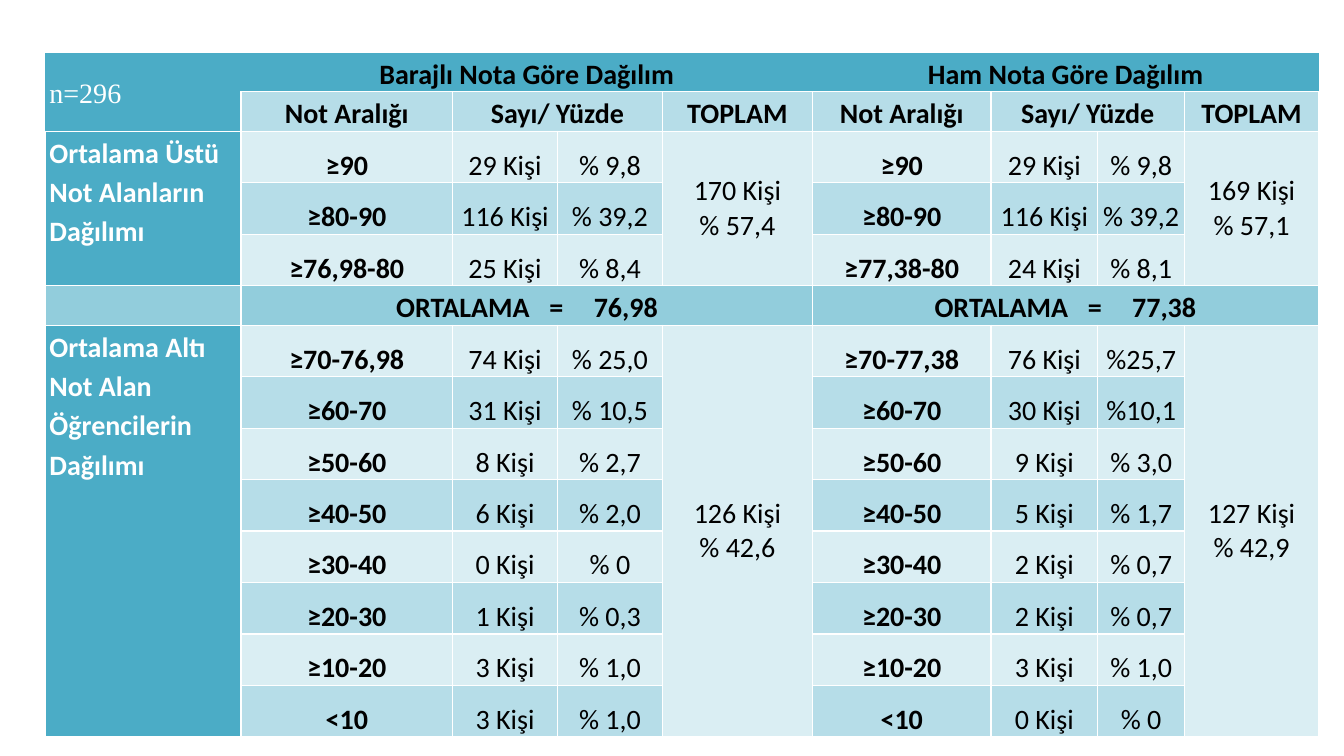
from dataclasses import dataclass
from lxml import etree
from pptx import Presentation, util as u
from pptx.dml.color import RGBColor
from pptx.enum import text
from pptx.oxml import ns

SAMPLE = "n=296"
HEADINGS = ("Not Aralığı", "Sayı/ Yüzde", "TOPLAM")
GROUPS = (
    ("Ortalama Üstü Not Alanların Dağılımı", 2, 3),
    ("Ortalama Altı Not Alan Öğrencilerin Dağılımı", 6, 8),
)
DISTRIBUTIONS = (
    {
        "title": "Barajlı Nota Göre Dağılım",
        "mean": "76,98",
        "mean_inset": 1.54,
        "totals": (("170 Kişi", "% 57,4"), ("126 Kişi", "% 42,6")),
        "rows": (
            (("≥90", "29 Kişi", "% 9,8"), ("≥80-90", "116 Kişi", "% 39,2"),
             ("≥76,98-80", "25 Kişi", "% 8,4")),
            (("≥70-76,98", "74 Kişi", "% 25,0"), ("≥60-70", "31 Kişi", "% 10,5"),
             ("≥50-60", "8 Kişi", "% 2,7"), ("≥40-50", "6 Kişi", "% 2,0"),
             ("≥30-40", "0 Kişi", "% 0"), ("≥20-30", "1 Kişi", "% 0,3"),
             ("≥10-20", "3 Kişi", "% 1,0"), ("<10", "3 Kişi", "% 1,0")),
        ),
    },
    {
        "title": "Ham Nota Göre Dağılım",
        "mean": "77,38",
        "mean_inset": 1.21,
        "totals": (("169 Kişi", "% 57,1"), ("127 Kişi", "% 42,9")),
        "rows": (
            (("≥90", "29 Kişi", "% 9,8"), ("≥80-90", "116 Kişi", "% 39,2"),
             ("≥77,38-80", "24 Kişi", "% 8,1")),
            (("≥70-77,38", "76 Kişi", "%25,7"), ("≥60-70", "30 Kişi", "%10,1"),
             ("≥50-60", "9 Kişi", "% 3,0"), ("≥40-50", "5 Kişi", "% 1,7"),
             ("≥30-40", "2 Kişi", "% 0,7"), ("≥20-30", "2 Kişi", "% 0,7"),
             ("≥10-20", "3 Kişi", "% 1,0"), ("<10", "0 Kişi", "% 0")),
        ),
    },
)
COLUMNS = (1.94, 2.1, 1.04, 1.04, 1.49, 1.77, 1.06, 0.86, 1.33)
HEADER_ROW, DATA_ROW = 0.39, 0.48
MEAN_ROW = 5
ROWS = [HEADER_ROW if row in (0, 1, MEAN_ROW) else DATA_ROW for row in range(14)]
LEFT, TOP = 0.45, 0.52
MEAN_TABS = (1.52, 1.96)
NO_GRID_STYLE = "{2D5ABB26-0587-4C30-8999-92F81FD0307C}"


@dataclass(frozen=True)
class Theme:
    strong: str = "4BACC6"
    medium: str = "92CDDC"
    soft: str = "B6DDE8"
    pale: str = "DAEEF3"
    ink: str = "000000"
    white: str = "FFFFFF"
    font: str = "Calibri"
    sample_font: str = "Times New Roman"
    size: int = 20
    border: int = 1
    inset: float = 0.04


THEME = Theme()


def add_border(cell, side):
    properties = cell._tc.get_or_add_tcPr()
    line = etree.SubElement(properties, ns.qn(f"a:{side}"), w=str(u.Pt(THEME.border)))
    fill = etree.SubElement(line, ns.qn("a:solidFill"))
    etree.SubElement(fill, ns.qn("a:srgbClr"), val=THEME.white)


def prepare_cell(cell, row, column):
    sides = ("lnT", "lnB") if row == 0 else ("lnL", "lnR", "lnT", "lnB")
    for side in sides:
        add_border(cell, side)
    cell.margin_left = cell.margin_right = u.Inches(THEME.inset)
    cell.margin_top = cell.margin_bottom = 0
    cell.vertical_anchor = text.MSO_ANCHOR.MIDDLE


def paint(cell, color):
    cell.fill.solid()
    cell.fill.fore_color.rgb = RGBColor.from_string(color)


def write(cell, lines, color=THEME.ink, bold=False, font=THEME.font,
          align=text.PP_ALIGN.CENTER, spacing=None, after=None):
    frame = cell.text_frame
    for index, line in enumerate(lines):
        paragraph = frame.add_paragraph() if index else frame.paragraphs[0]
        paragraph.alignment = align
        if spacing:
            paragraph.line_spacing = spacing
        if after:
            paragraph.space_after = u.Pt(after)
        run = paragraph.add_run()
        run.text = line
        run.font.name = font
        run.font.size = u.Pt(THEME.size)
        run.font.bold = bold
        run.font.color.rgb = RGBColor.from_string(color)


def write_label(cell, label, **style):
    write(cell, [label], spacing=1.15, after=10, **style)


def write_mean(cell, distribution):
    cell.margin_left = u.Inches(distribution["mean_inset"])
    write_label(cell, f"ORTALAMA\t=\t{distribution['mean']}", bold=True,
                align=text.PP_ALIGN.LEFT)
    properties = cell.text_frame.paragraphs[0]._p.get_or_add_pPr()
    tabs = etree.SubElement(properties, ns.qn("a:tabLst"))
    for position in MEAN_TABS:
        etree.SubElement(tabs, ns.qn("a:tab"), pos=str(u.Inches(position)), algn="l")


def merge(table, row, column, height, width):
    cell = table.cell(row, column)
    cell.merge(table.cell(row + height - 1, column + width - 1))
    return cell


def row_color(row):
    if row in (0, MEAN_ROW):
        return THEME.strong if row == 0 else THEME.medium
    if row == 1:
        return THEME.soft
    start = max(first for _, first, _ in GROUPS if first <= row)
    return THEME.soft if (row - start) % 2 else THEME.pale


def fill_distribution(table, distribution, column):
    write_label(merge(table, 0, column, 1, 4), distribution["title"], bold=True)
    merge(table, 1, column + 1, 1, 2)
    for offset, heading in zip((0, 1, 3), HEADINGS):
        write_label(table.cell(1, column + offset), heading, bold=True)
    write_mean(merge(table, MEAN_ROW, column, 1, 4), distribution)
    for (_, start, height), rows, total in zip(
            GROUPS, distribution["rows"], distribution["totals"]):
        for row, values in enumerate(rows, start):
            for offset, value in enumerate(values):
                write(table.cell(row, column + offset), [value],
                      bold=offset == 0, spacing=1.5)
        total_cell = merge(table, start, column + 3, height, 1)
        paint(total_cell, THEME.pale)
        write(total_cell, total)


def main():
    presentation = Presentation()
    presentation.slide_width = u.Inches(13.33)
    presentation.slide_height = u.Inches(7.5)
    slide = presentation.slides.add_slide(presentation.slide_layouts[6])
    shape = slide.shapes.add_table(
        len(ROWS), len(COLUMNS), u.Inches(LEFT), u.Inches(TOP),
        u.Inches(sum(COLUMNS)), u.Inches(sum(ROWS)))
    table = shape.table
    table.first_row = table.horz_banding = False
    table._tbl.tblPr.find(ns.qn("a:tableStyleId")).text = NO_GRID_STYLE
    for column, width in enumerate(COLUMNS):
        table.columns[column].width = u.Inches(width)
    for row, height in enumerate(ROWS):
        table.rows[row].height = u.Inches(height)
        for column in range(len(COLUMNS)):
            cell = table.cell(row, column)
            prepare_cell(cell, row, column)
            label = column == 0 and row != MEAN_ROW
            paint(cell, THEME.strong if label else row_color(row))

    write_label(merge(table, 0, 0, 2, 1), SAMPLE, color=THEME.white,
                font=THEME.sample_font, align=text.PP_ALIGN.LEFT)
    for label, start, height in GROUPS:
        cell = merge(table, start, 0, height, 1)
        cell.vertical_anchor = text.MSO_ANCHOR.TOP
        write_label(cell, label, color=THEME.white, bold=True,
                    align=text.PP_ALIGN.LEFT)
    for index, distribution in enumerate(DISTRIBUTIONS):
        fill_distribution(table, distribution, 1 + 4 * index)
    presentation.save("out.pptx")


if __name__ == "__main__":
    main()
